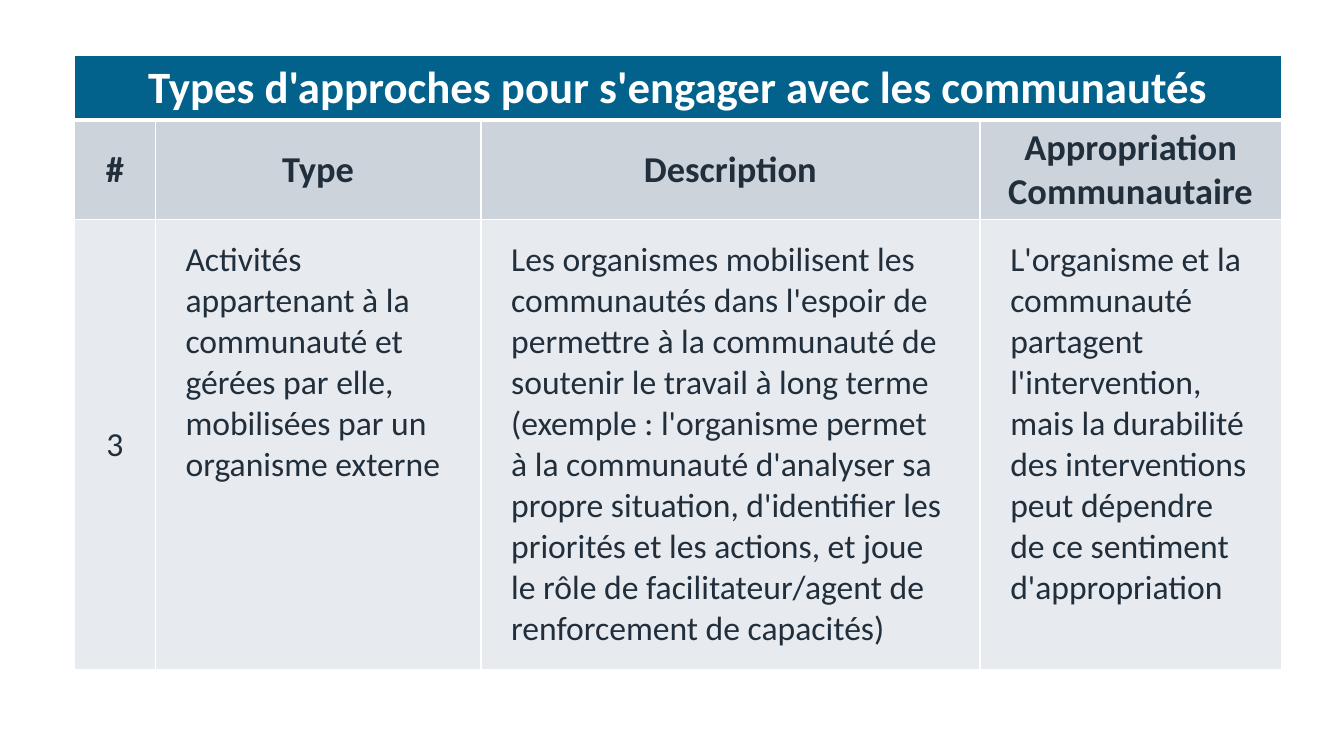
from dataclasses import dataclass

from lxml.etree import SubElement
from pptx import Presentation
from pptx.dml.color import RGBColor
from pptx.enum.text import MSO_ANCHOR, PP_ALIGN
from pptx.oxml.ns import qn
from pptx.util import Inches, Pt


@dataclass(frozen=True)
class Theme:
    font: str = "Calibri"
    white: str = "FFFFFF"
    ink: str = "212E3B"
    title_fill: str = "02628C"
    head_fill: str = "CCD3DA"
    body_fill: str = "E7EAEE"
    title_size: int = 32
    head_size: int = 26
    body_size: int = 24
    thin: int = 1
    thick: int = 3


class Deck:
    """Draws styled elements on a slide with a grid of 1333 columns by 750 rows."""

    def __init__(self, theme):
        self.theme = theme
        self.prs = Presentation()
        self.prs.slide_width, self.prs.slide_height = Inches(13.33), Inches(7.5)
        self.s = self.prs.slides.add_slide(self.prs.slide_layouts[6])

    def x(self, cols):
        return round(self.prs.slide_width * cols / 1333)

    def y(self, rows):
        return round(self.prs.slide_height * rows / 750)

    def table(self, left, top, cols, rows):
        tbl = self.s.shapes.add_table(
            len(rows), len(cols), self.x(left), self.y(top),
            self.x(sum(cols)), self.y(sum(rows))).table
        tbl.first_row = tbl.horz_banding = False
        for col, width in zip(tbl.columns, cols):
            col.width = self.x(width)
        for row, height in zip(tbl.rows, rows):
            row.height = self.y(height)
        return tbl

    def borders(self, cell, **widths):
        tcPr = cell._tc.get_or_add_tcPr()
        for side in "LRTB":
            width = Pt(widths.get(side, self.theme.thin))
            ln = SubElement(tcPr, qn(f"a:ln{side}"), w=str(width))
            fill = SubElement(ln, qn("a:solidFill"))
            SubElement(fill, qn("a:srgbClr"), val=self.theme.white)

    def cell(self, cell, text, fill, font, align=PP_ALIGN.CENTER, box=None):
        cell.fill.solid()
        cell.fill.fore_color.rgb = RGBColor.from_string(fill)
        for name, value in (box or {}).items():
            setattr(cell, name, value)
        p = cell.text_frame.paragraphs[0]
        p.alignment = align
        r = p.add_run()
        r.text = text
        color, *_ = font["color"],
        r.font.color.rgb = RGBColor.from_string(color)
        for name in ("name", "size", "bold"):
            setattr(r.font, name, font[name])

    def font(self, size, color, bold=False):
        return {"name": self.theme.font, "size": Pt(size), "color": color, "bold": bold}


def main():
    t = Theme()
    deck = Deck(t)
    tbl = deck.table(74, 55, cols=[80, 323, 495, 299], rows=[64, 98, 446])
    title, heads, body = ([tbl.cell(i, j) for j in range(4)] for i in range(3))

    for cell in title:
        deck.borders(cell, B=t.thick)
    for cell in heads:
        deck.borders(cell, T=t.thick)
    for cell in body:
        deck.borders(cell)

    title[0].merge(title[-1])
    deck.cell(title[0], "Types d'approches pour s'engager avec les communautés",
              t.title_fill, deck.font(t.title_size, t.white, True))

    middle = {"vertical_anchor": MSO_ANCHOR.MIDDLE}
    labels = ["#", "Type", "Description", "Appropriation Communautaire"]
    for cell, label in zip(heads, labels):
        deck.cell(cell, label, t.head_fill, deck.font(t.head_size, t.ink, True), box=middle)

    padded = {"margin_left": deck.x(30), "margin_right": deck.x(30),
              "margin_top": deck.y(20), "margin_bottom": deck.y(20)}
    body_font = deck.font(t.body_size, t.ink)
    deck.cell(body[0], "3", t.body_fill, body_font, box=middle)
    texts = [
        "Activités appartenant à la communauté et gérées par elle, "
        "mobilisées par un organisme externe",
        "Les organismes mobilisent les communautés dans l'espoir de permettre "
        "à la communauté de soutenir le travail à long terme (exemple : "
        "l'organisme permet à la communauté d'analyser sa propre situation, "
        "d'identifier les priorités et les actions, et joue le rôle de "
        "facilitateur/agent de renforcement de capacités)",
        "L'organisme et la communauté partagent l'intervention, mais la "
        "durabilité des interventions peut dépendre de ce sentiment d'appropriation",
    ]
    for cell, text in zip(body[1:], texts):
        deck.cell(cell, text, t.body_fill, body_font, PP_ALIGN.LEFT, padded)

    deck.prs.save("out.pptx")


if __name__ == "__main__":
    main()
